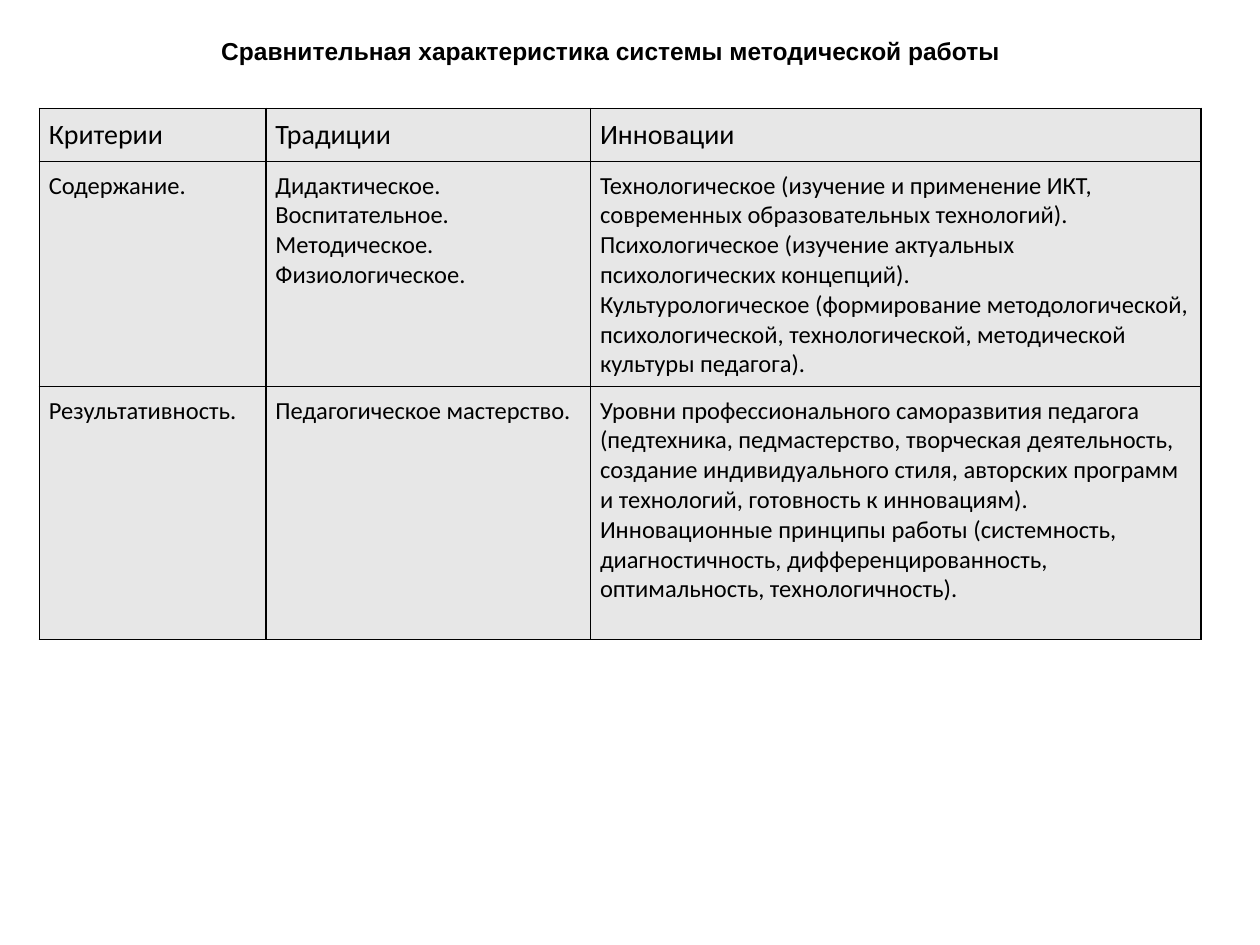
from lxml import etree
from pptx import Presentation
from pptx import util as u
from pptx.dml.color import RGBColor
from pptx.enum import text
from pptx.oxml.ns import qn

Pt = u.Pt
BLACK, GREY = "000000", "E7E7E7"

TITLE = "Сравнительная характеристика системы методической работы"
CRITERIA = [
    ["Критерии", "Традиции", "Инновации"],
    [
        "Содержание.",
        "Дидактическое.\nВоспитательное.\nМетодическое.\nФизиологическое.",
        "Технологическое (изучение и применение ИКТ, современных "
        "образовательных технологий).\n"
        "Психологическое (изучение актуальных психологических концепций).\n"
        "Культурологическое (формирование методологической, психологической, "
        "технологической, методической культуры педагога).",
    ],
    [
        "Результативность.",
        "Педагогическое мастерство.",
        "Уровни профессионального саморазвития педагога (педтехника, "
        "педмастерство, творческая деятельность, создание индивидуального "
        "стиля, авторских программ и технологий, готовность к инновациям).\n"
        "Инновационные принципы работы (системность, диагностичность, "
        "дифференцированность, оптимальность, технологичность).",
    ],
]
COLUMN_WIDTHS = [129.5, 185.5, 348.8]
ROW_HEIGHTS = [30.2, 128.6, 144.6]


def color(hex_value):
    return RGBColor.from_string(hex_value)


def set_font(paragraph, name, size, bold=False):
    font = paragraph.font
    font.name, font.size, font.bold = name, Pt(size), bold
    font.color.rgb = color(BLACK)


def add_borders(cell, width=1):
    """Draw all four edges; they must precede the fill in the cell XML."""
    properties = cell._tc.get_or_add_tcPr()
    for position, side in enumerate(("a:lnL", "a:lnR", "a:lnT", "a:lnB")):
        edge = etree.Element(qn(side), w=str(Pt(width)))
        fill = etree.SubElement(edge, qn("a:solidFill"))
        etree.SubElement(fill, qn("a:srgbClr"), val=BLACK)
        properties.insert(position, edge)


def add_title(slide, left, top, width, height):
    title = slide.shapes.add_textbox(Pt(left), Pt(top), Pt(width), Pt(height))
    frame = title.text_frame
    frame.word_wrap = False
    frame.auto_size = text.MSO_AUTO_SIZE.SHAPE_TO_FIT_TEXT
    frame.vertical_anchor = text.MSO_ANCHOR.MIDDLE
    frame.text = TITLE
    heading = frame.paragraphs[0]
    heading.alignment = text.PP_ALIGN.CENTER
    set_font(heading, "Arial", 14, bold=True)


def fill_cell(cell, content, size):
    cell.margin_left = cell.margin_right = cell.margin_top = Pt(5.4)
    cell.margin_bottom = Pt(3.6)
    cell.fill.solid()
    cell.fill.fore_color.rgb = color(GREY)
    add_borders(cell)
    cell.text = content
    for paragraph in cell.text_frame.paragraphs:
        set_font(paragraph, "Calibri", size)


def add_comparison(slide, left, top):
    comparison = slide.shapes.add_table(
        len(ROW_HEIGHTS), len(COLUMN_WIDTHS), Pt(left), Pt(top),
        Pt(sum(COLUMN_WIDTHS)), Pt(sum(ROW_HEIGHTS))).table
    comparison.first_row = comparison.horz_banding = False
    for column, width in zip(comparison.columns, COLUMN_WIDTHS):
        column.width = Pt(width)
    for row_index, (row, height) in enumerate(zip(comparison.rows, ROW_HEIGHTS)):
        row.height = Pt(height)
        size = 16 if row_index == 0 else 14
        for cell, content in zip(row.cells, CRITERIA[row_index]):
            fill_cell(cell, content, size)


def main():
    deck = Presentation()
    deck.slide_width, deck.slide_height = Pt(720), Pt(540)
    slide = deck.slides.add_slide(deck.slide_layouts[6])

    # Criteria table
    add_comparison(slide, left=22.5, top=62)
    # Heading above the table
    add_title(slide, left=118, top=16.6, width=462, height=24.5)

    deck.save("out.pptx")


if __name__ == "__main__":
    main()
